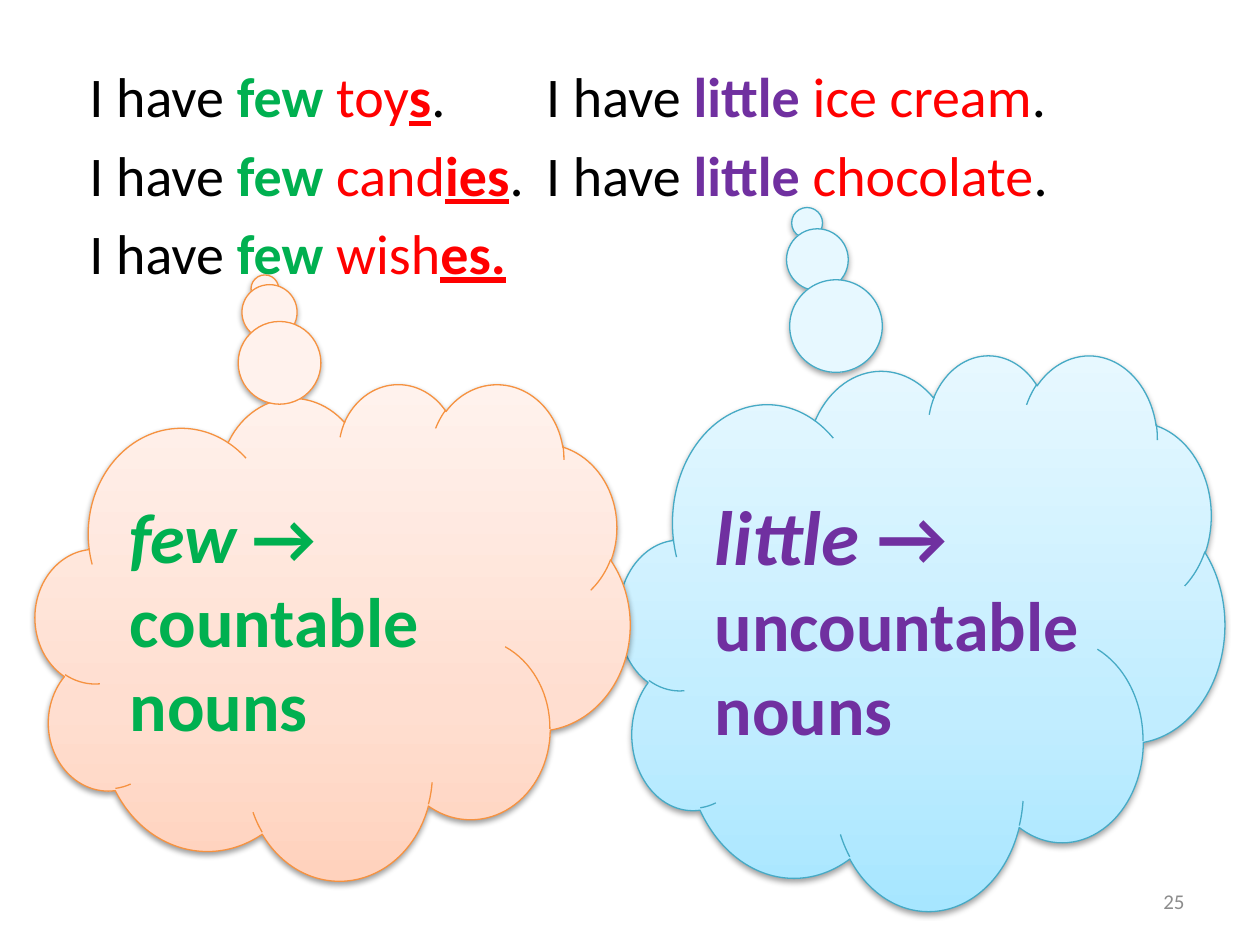
import pptx
import pptx.util
import pptx.dml.color
import pptx.enum.shapes
import pptx.enum.text
import pptx.oxml.ns
import lxml.etree

Pt = pptx.util.Pt
qn = pptx.oxml.ns.qn
ANCHOR = pptx.enum.text.MSO_ANCHOR
ALIGN = pptx.enum.text.PP_ALIGN

COLORS = {
    "black": "000000", "green": "00B050", "red": "FF0000",
    "purple": "7030A0", "grey": "8C8C8C",
    "blue line": "46AAC5", "orange line": "F69240",
}
BLUE_STOPS = [(0, "A7E6FF"), (35, "C1EDFF"), (100, "E7F8FF")]
ORANGE_STOPS = [(0, "FFD2BD"), (35, "FFDED0"), (100, "FFF2ED")]


def rgb(value):
    return pptx.dml.color.RGBColor.from_string(value)


def add_span(para, text, size, color, bold=False, italic=False, underline=False):
    span = para.add_run()
    span.text = text
    font = span.font
    font.name, font.size = "Calibri", Pt(size)
    font.bold, font.italic, font.underline = bold, italic, underline
    font.color.rgb = rgb(COLORS[color])


def add_element(parent, tag, **attributes):
    element = lxml.etree.SubElement(parent, qn(tag))
    for name, value in attributes.items():
        element.set(name, str(value))
    return element


def add_text_box(page, left, top, width, height):
    box = page.shapes.add_textbox(Pt(left), Pt(top), Pt(width), Pt(height))
    box.text_frame.word_wrap = True
    return box


def add_sentence(para, quantifier, color, noun, ending, stop):
    add_span(para, "I have ", 32, "black")
    add_span(para, quantifier + " ", 32, color, bold=True)
    add_span(para, noun, 32, "red")
    if ending:
        add_span(para, ending, 32, "red", bold=True, underline=True)
    if stop:
        add_span(para, stop, 32, "black")


def add_examples(page, left, top, width, height):
    """Example sentences in two columns set by a tab stop."""
    rows = [
        (("toy", "s", "."), "ice cream"),
        (("cand", "ies", "."), "chocolate"),
        (("wish", "es.", ""), None),
    ]
    frame = add_text_box(page, left, top, width, height).text_frame
    frame.margin_left = Pt(14.4)
    for index, (countable, uncountable) in enumerate(rows):
        para = frame.add_paragraph() if index else frame.paragraphs[0]
        para.space_before = Pt(6.4 if index else 0)
        add_sentence(para, "few", "green", *countable)
        if uncountable:
            tabs = add_element(para._p.get_or_add_pPr(), "a:tabLst")
            add_element(tabs, "a:tab", pos=int(Pt(261)), algn="l")
            add_span(para, "\t", 32, "black")
            add_sentence(para, "little", "purple", uncountable, "", ".")


def add_cloud(page, left, top, width, height, tail, stops, line, color, spans):
    """Thought cloud with a gradient, a soft shadow and a rule."""
    cloud = page.shapes.add_shape(
        pptx.enum.shapes.MSO_SHAPE.CLOUD_CALLOUT,
        Pt(left), Pt(top), Pt(width), Pt(height))
    cloud.adjustments[0], cloud.adjustments[1] = tail

    # Gradient running upwards
    cloud.fill.gradient()
    cloud.fill.gradient_angle = 90
    stop_list = cloud._element.spPr.find(".//" + qn("a:gsLst"))
    for old_stop in list(stop_list):
        stop_list.remove(old_stop)
    for position, value in stops:
        stop = add_element(stop_list, "a:gs", pos=position * 1000)
        add_element(stop, "a:srgbClr", val=value)
    cloud.line.color.rgb = rgb(COLORS[line])
    cloud.line.width = Pt(0.75)

    # Shadow
    cloud.shadow.inherit = False
    effects = cloud._element.spPr.find(qn("a:effectLst"))
    shadow = add_element(effects, "a:outerShdw", blurRad=int(Pt(3.1)),
                         dist=int(Pt(1.6)), dir=90 * 60000, rotWithShape=0)
    shade = add_element(shadow, "a:srgbClr", val=COLORS["black"])
    add_element(shade, "a:alpha", val=38000)

    # Rule
    frame = cloud.text_frame
    frame.word_wrap = True
    frame.vertical_anchor = ANCHOR.MIDDLE
    para = frame.paragraphs[0]
    para.alignment = ALIGN.LEFT
    for text, size, italic in spans:
        add_span(para, text, size, color, bold=True, italic=italic)


def add_page_number(page, left, top, width, height, number):
    frame = add_text_box(page, left, top, width, height).text_frame
    frame.vertical_anchor = ANCHOR.MIDDLE
    para = frame.paragraphs[0]
    para.alignment = ALIGN.RIGHT
    add_span(para, number, 12, "grey")


def main():
    deck = pptx.Presentation()
    deck.slide_width, deck.slide_height = Pt(720), Pt(540)
    page = deck.slides.add_slide(deck.slide_layouts[6])
    add_examples(page, 36.7, 31.7, 648, 356.4)
    add_cloud(page, 353.5, 202.3, 346.3, 317.5, (-0.189, -0.736),
              BLUE_STOPS, "blue line", "purple",
              [("little ", 44, True), ("→ ", 44, False),
               ("uncountable nouns", 40, False)])
    add_cloud(page, 20.2, 218.9, 339.8, 283.7, (-0.114, -0.69),
              ORANGE_STOPS, "orange line", "green",
              [("few ", 40, True), ("→ countable nouns", 40, False)])
    add_page_number(page, 516.2, 500.4, 167.8, 28.8, "25")
    deck.save("out.pptx")


if __name__ == "__main__":
    main()
